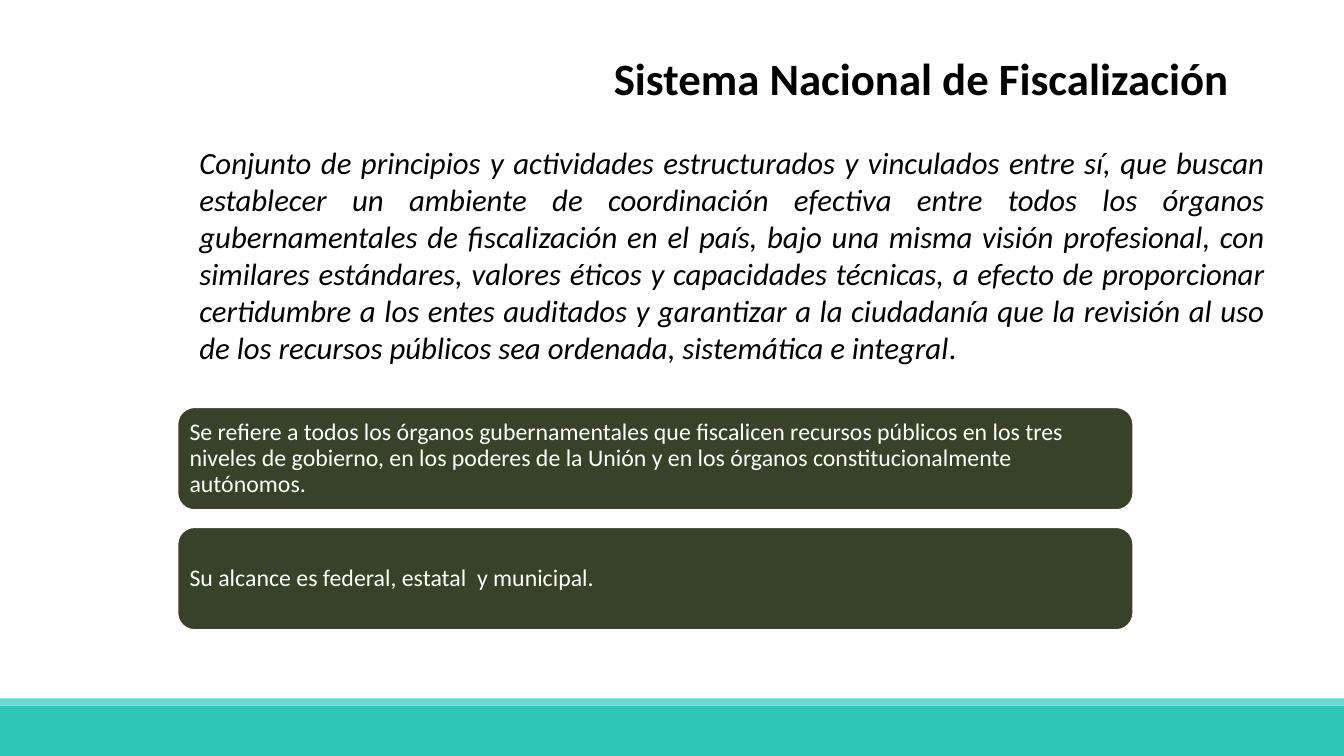
import pptx
import pptx.util
import pptx.dml.color
import pptx.enum.shapes
import pptx.enum.text

Inches = pptx.util.Inches
Align = pptx.enum.text.PP_ALIGN
Anchor = pptx.enum.text.MSO_ANCHOR
Preset = pptx.enum.shapes.MSO_SHAPE

COLORS = {
    "text": "000000",
    "white": "FFFFFF",
    "band": "2DC5B6",
    "stripe": "66DCD1",
    "card": "384229",
}

DEFINITION = (
    "Conjunto de principios y actividades estructurados y vinculados entre sí, "
    "que buscan establecer un ambiente de coordinación efectiva entre todos los "
    "órganos gubernamentales de fiscalización en el país, bajo una misma visión "
    "profesional, con similares estándares, valores éticos y capacidades técnicas, "
    "a efecto de proporcionar certidumbre a los entes auditados y garantizar a la "
    "ciudadanía que la revisión al uso de los recursos públicos sea ordenada, "
    "sistemática e integral"
)
CARDS = [
    "Se refiere a todos los órganos gubernamentales que fiscalicen recursos "
    "públicos en los tres niveles de gobierno, en los poderes de la Unión y en "
    "los órganos constitucionalmente autónomos.",
    "Su alcance es federal, estatal  y municipal.",
]


class SlideBuilder:
    """Holds the style and the current slide."""

    font = "Calibri"

    def __init__(self, slide):
        self.slide = slide

    def color(self, name):
        return pptx.dml.color.RGBColor.from_string(COLORS[name])

    def run(self, paragraph, text, size, color="text", bold=False, italic=False):
        run = paragraph.add_run()
        run.text = text
        run.font.name = self.font
        run.font.size = pptx.util.Pt(size)
        run.font.bold = bold
        run.font.italic = italic
        run.font.color.rgb = self.color(color)

    def box(self, preset, left, top, width, height, fill, line=None):
        shape = self.slide.shapes.add_shape(
            preset, Inches(left), Inches(top), Inches(width), Inches(height))
        shape.shadow.inherit = False
        shape.fill.solid()
        shape.fill.fore_color.rgb = self.color(fill)
        if line:
            shape.line.color.rgb = self.color(line)
            shape.line.width = pptx.util.Pt(1.25)
        else:
            shape.line.fill.background()
        return shape

    def text(self, left, top, width, height, alignment):
        shape = self.slide.shapes.add_textbox(
            Inches(left), Inches(top), Inches(width), Inches(height))
        frame = shape.text_frame
        frame.word_wrap = True
        frame.auto_size = pptx.enum.text.MSO_AUTO_SIZE.SHAPE_TO_FIT_TEXT
        paragraph = frame.paragraphs[0]
        paragraph.alignment = alignment
        return paragraph

    def card(self, left, top, width, height, text):
        shape = self.box(Preset.ROUNDED_RECTANGLE, left, top, width, height,
                         "card", line="white")
        frame = shape.text_frame
        frame.word_wrap = True
        frame.vertical_anchor = Anchor.MIDDLE
        frame.margin_left = frame.margin_right = Inches(0.07)
        frame.margin_top = frame.margin_bottom = Inches(0.07)
        paragraph = frame.paragraphs[0]
        paragraph.alignment = Align.LEFT
        paragraph.line_spacing = 0.9
        self.run(paragraph, text, 17, "white")


def main():
    presentation = pptx.Presentation()
    presentation.slide_width = Inches(13.33)
    presentation.slide_height = Inches(7.5)
    slide = presentation.slides.add_slide(presentation.slide_layouts[6])
    builder = SlideBuilder(slide)

    # Footer bands
    builder.box(Preset.RECTANGLE, 0, 7, 13.33, 0.5, "band")
    builder.box(Preset.RECTANGLE, 0, 6.93, 13.33, 0.07, "stripe")

    # Title
    title = builder.text(2.01, 0.45, 10.28, 0.64, Align.RIGHT)
    builder.run(title, "Sistema Nacional de Fiscalización", 32, bold=True)

    # Definition
    definition = builder.text(1.88, 1.38, 10.76, 2.32, Align.JUSTIFY)
    builder.run(definition, DEFINITION, 22, italic=True)
    builder.run(definition, ".", 22)

    # Scope cards
    for index, text in enumerate(CARDS):
        builder.card(1.76, 4.04 + index * 1.19, 9.48, 1.02, text)

    presentation.save("out.pptx")


if __name__ == "__main__":
    main()
